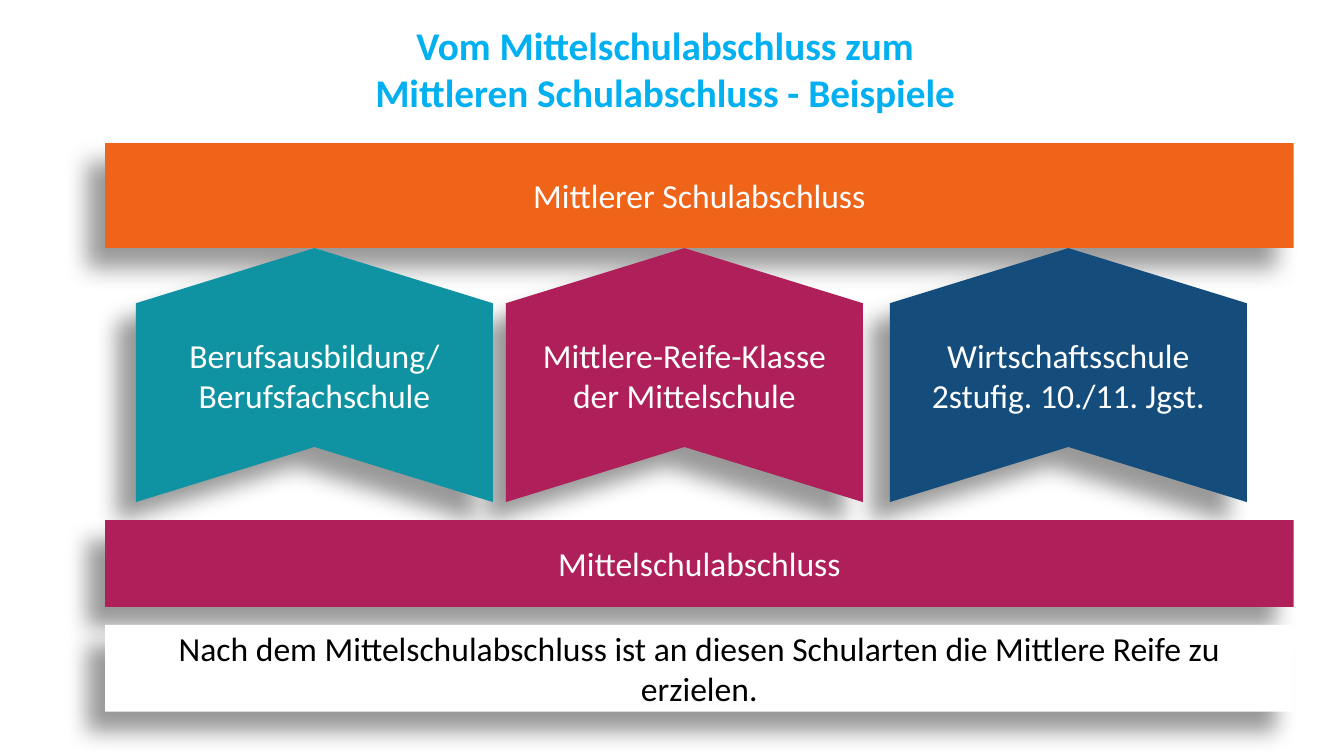
from dataclasses import dataclass

from lxml.etree import SubElement
from pptx import Presentation
from pptx.dml.color import RGBColor
from pptx.enum.shapes import MSO_SHAPE as Preset
from pptx.enum.text import MSO_ANCHOR as Anchor, PP_ALIGN as Align
from pptx.oxml.ns import qn
from pptx.util import Pt


@dataclass(frozen=True)
class Theme:
    font: str = "Calibri"
    title_size: float = 28
    body_size: float = 24
    sky: str = "00B0F0"
    orange: str = "F0641A"
    berry: str = "AF1F59"
    navy: str = "144D7C"
    teal: str = "0F92A1"
    white: str = "FFFFFF"
    black: str = "000000"


def apply_format(target, values):
    for name, value in values.items():
        setattr(target, name, value)


class PageBuilder:
    def __init__(self, page, theme):
        self.page = page
        self.theme = theme

    def set_text(self, frame, text, size, color, bold=False):
        para = frame.paragraphs[0]
        para.alignment = Align.CENTER
        para.text = text
        for span in para.runs:
            apply_format(span.font, {"name": self.theme.font, "size": Pt(size), "bold": bold})
            span.font.color.rgb = RGBColor.from_string(color)

    def title(self, text, left, top, width, height):
        box = self.page.shapes.add_textbox(Pt(left), Pt(top), Pt(width), Pt(height))
        apply_format(box.text_frame, {"word_wrap": True, "margin_right": Pt(35)})
        self.set_text(box.text_frame, text, self.theme.title_size, self.theme.sky, True)

    def cast_shadow(self, shape):
        shape.shadow.inherit = False
        effects = shape._element.spPr.find(qn("a:effectLst"))
        shadow = SubElement(effects, qn("a:outerShdw"), {
            "blurRad": str(Pt(16)), "dist": str(Pt(19)),
            "dir": str(135 * 60000), "algn": "tr", "rotWithShape": "0",
        })
        tint = SubElement(shadow, qn("a:srgbClr"), val=self.theme.black)
        SubElement(tint, qn("a:alpha"), val="40000")

    def block(self, preset, text, left, top, width, height, fill, color):
        shape = self.page.shapes.add_shape(preset, Pt(left), Pt(top), Pt(width), Pt(height))
        shape.fill.solid()
        shape.fill.fore_color.rgb = RGBColor.from_string(fill)
        shape.line.fill.background()
        self.cast_shadow(shape)
        apply_format(shape.text_frame, {"word_wrap": True, "vertical_anchor": Anchor.MIDDLE})
        self.set_text(shape.text_frame, text, self.theme.body_size, color)
        return shape

    def bar(self, text, top, height, fill, color):
        shape = self.block(Preset.RECTANGLE, text, 75, top, 849, height, fill, color)
        apply_format(shape.text_frame, {
            "margin_left": Pt(9.4), "margin_right": Pt(9.4),
            "margin_top": Pt(5), "margin_bottom": Pt(5),
        })

    def upward_chevron(self, text, left, fill):
        shape = self.block(Preset.CHEVRON, text, left, 140.4, 181.4, 255, fill, self.theme.white)
        shape.rotation = 270
        shape.adjustments[0] = 0.217
        shape.text_frame._txBody.bodyPr.set("vert", "vert")


def main():
    deck = Presentation()
    deck.slide_width, deck.slide_height = Pt(960), Pt(540)
    theme = Theme()
    builder = PageBuilder(deck.slides.add_slide(deck.slide_layouts[6]), theme)

    builder.title("Vom Mittelschulabschluss zum\vMittleren Schulabschluss - Beispiele",
                  206, 11.5, 566, 75)
    builder.bar("Mittlerer Schulabschluss", 102.2, 75, theme.orange, theme.white)
    for text, left, fill in (
        ("Wirtschaftsschule 2stufig. 10./11. Jgst.", 672.4, theme.navy),
        ("Mittlere-Reife-Klasse\vder Mittelschule", 398.2, theme.berry),
        ("Berufsausbildung/\vBerufsfachschule", 133.9, theme.teal),
    ):
        builder.upward_chevron(text, left, fill)
    builder.bar("Mittelschulabschluss", 371.5, 62, theme.berry, theme.white)
    builder.bar("Nach dem Mittelschulabschluss ist an diesen Schularten die Mittlere Reife zu erzielen.",
                446.4, 62, theme.white, theme.black)
    deck.save("out.pptx")


if __name__ == "__main__":
    main()
